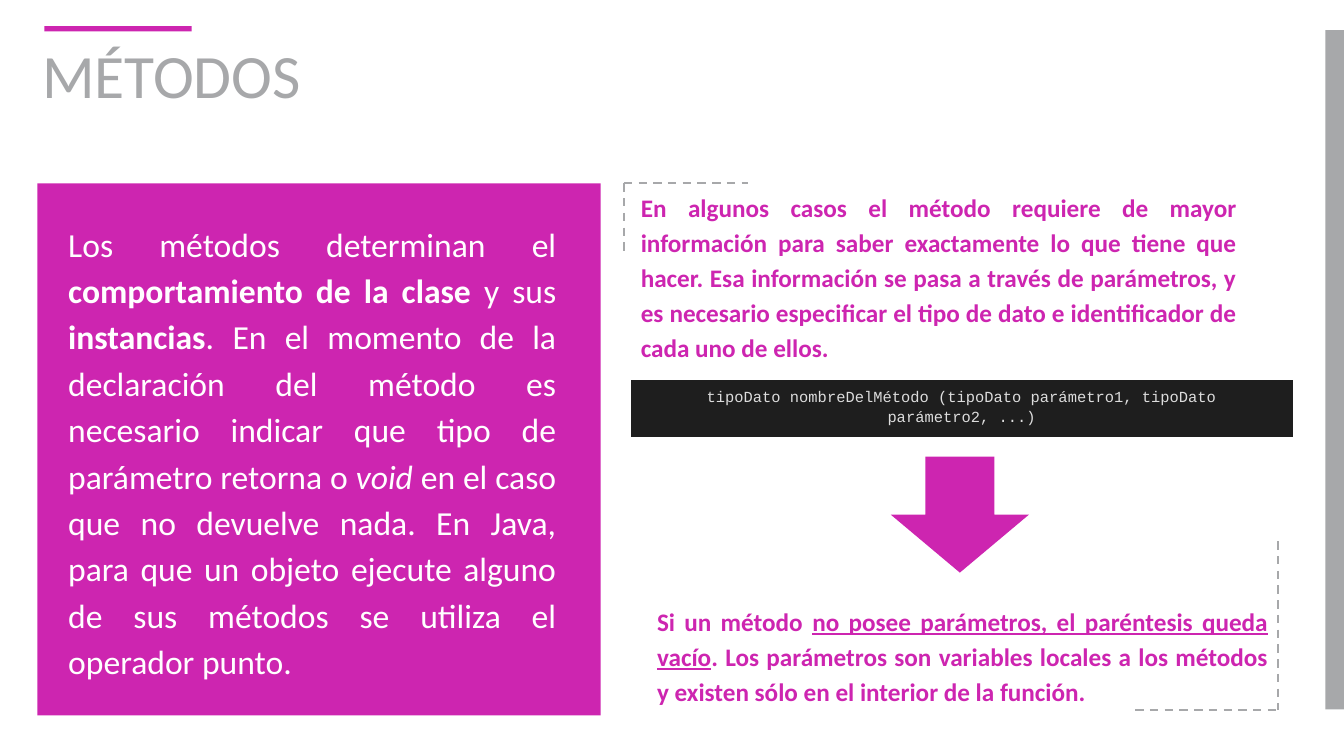
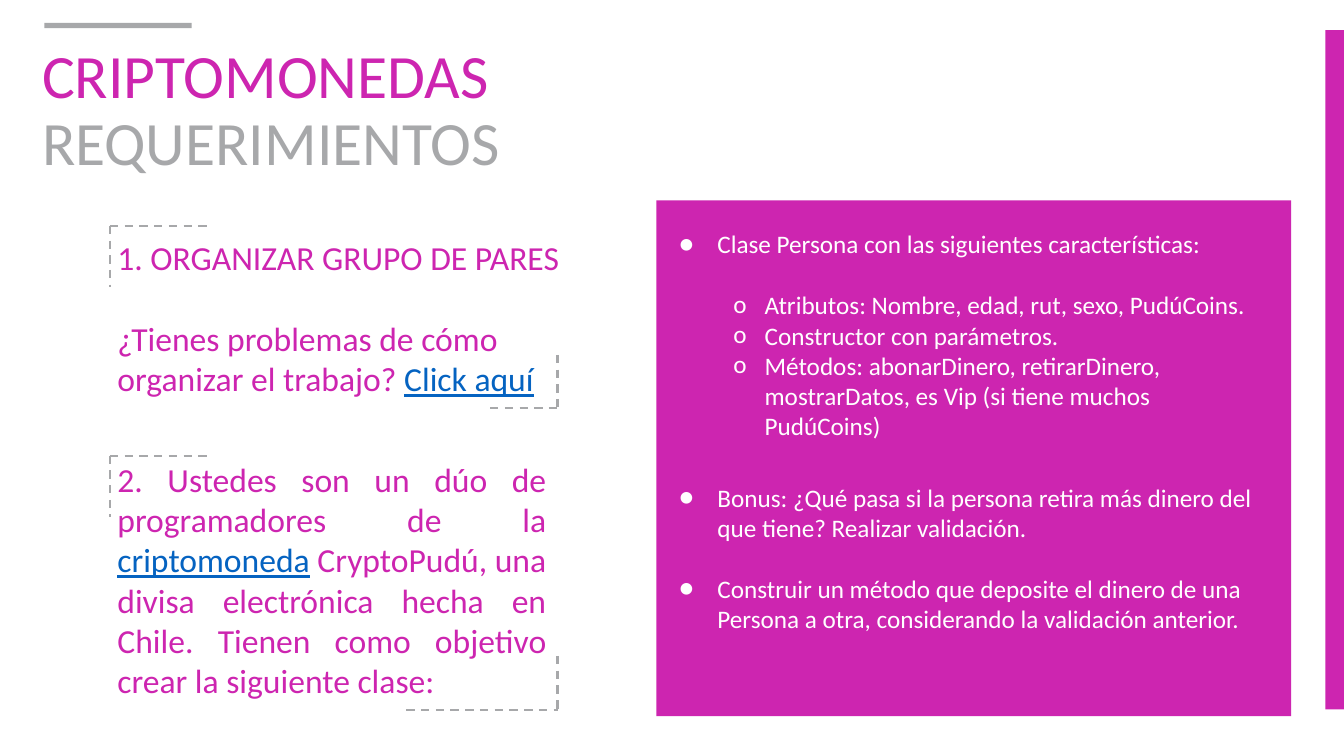
from lxml import etree
from pptx import Presentation
from pptx import util as u
from pptx.dml.color import RGBColor
from pptx.enum import dml, shapes, text
from pptx.oxml import ns

COLORS = {
    "magenta": "CD25B0",
    "gray": "A7A8AA",
    "white": "FFFFFF",
    "link": "0563C1",
    "code": "DCDCDC",
    "code_bg": "1E1E1E",
}
FONT, CODE_FONT = "Calibri", "Courier New"
JUSTIFY = text.PP_ALIGN.JUSTIFY
CENTER = text.PP_ALIGN.CENTER
RECT = shapes.MSO_SHAPE.RECTANGLE


def rgb(name):
    return RGBColor.from_string(COLORS[name])


class Deck:
    def __init__(self):
        self.prs = Presentation()
        self.prs.slide_width, self.prs.slide_height = u.Cm(33.87), u.Cm(19.05)
        self.s = None

    def slide(self, title, band, accent, accent_top):
        self.s = self.prs.slides.add_slide(self.prs.slide_layouts[6])
        self.shape(33.4, 0.76, 0.48, 17.12, band)
        tf = self.box(0.81, 1.02, 29.21, 3.68)
        for line, color in title:
            self.para(tf, [(line, "")], 44, color, spacing=0.9)
        self.shape(1.12, accent_top, 3.71, 0.13, accent)

    def shape(self, x, y, w, h, color, kind=RECT):
        sp = self.s.shapes.add_shape(kind, u.Cm(x), u.Cm(y), u.Cm(w), u.Cm(h))
        sp.shadow.inherit = False
        sp.fill.solid()
        sp.fill.fore_color.rgb = rgb(color)
        sp.line.fill.background()

    def box(self, x, y, w, h):
        sp = self.s.shapes.add_textbox(u.Cm(x), u.Cm(y), u.Cm(w), u.Cm(h))
        sp.text_frame.word_wrap = True
        return sp.text_frame

    def para(self, tf, runs, size, color, align=None, spacing=1.0, after=0,
             indent=(0, 0), bullet=None, font=FONT):
        p = tf.paragraphs[0]
        if p.runs:
            p = tf.add_paragraph()
        p.alignment, p.line_spacing, p.space_after = align, spacing, u.Pt(after)
        pPr = p._p.get_or_add_pPr()
        pPr.set("marL", str(u.Cm(indent[0])))
        pPr.set("indent", str(u.Cm(indent[1])))
        if bullet:
            clr = etree.SubElement(pPr, ns.qn("a:buClr"))
            etree.SubElement(clr, ns.qn("a:srgbClr"), val=COLORS[color])
            etree.SubElement(pPr, ns.qn("a:buFont"), typeface=font)
            etree.SubElement(pPr, ns.qn("a:buChar"), char=bullet)
        for words, style in runs:
            r = p.add_run()
            r.text = words
            f = r.font
            f.name, f.size = font, u.Pt(size)
            f.color.rgb = rgb("link" if style == "link" else color)
            f.bold = "b" in style
            f.italic = style == "i"
            f.underline = style in ("link", "bu")

    def corner(self, x, y, dx, dy):
        for x2, y2 in ((x + dx, y), (x, y + dy)):
            ends = (min(x, x2), min(y, y2), max(x, x2), max(y, y2))
            ln = self.s.shapes.add_connector(
                shapes.MSO_CONNECTOR.STRAIGHT, *map(u.Cm, ends))
            ln.line.color.rgb = rgb("gray")
            ln.line.width = u.Pt(1.5)
            ln.line.dash_style = dml.MSO_LINE.DASH
            etree.SubElement(ln._element.spPr, ns.qn("a:effectLst"))

    def code(self, x, y, w, h, words):
        tbl = self.s.shapes.add_table(1, 1, u.Cm(x), u.Cm(y), u.Cm(w), u.Cm(h)).table
        tbl.first_row = tbl.horz_banding = False
        cell = tbl.cell(0, 0)
        cell.fill.solid()
        cell.fill.fore_color.rgb = rgb("code_bg")
        cell.margin_left = cell.margin_right = u.Cm(0.2)
        cell.margin_top = cell.margin_bottom = u.Cm(0.2)
        self.para(cell.text_frame, [(words, "")], 11, "code", CENTER, 1.15,
                  font=CODE_FONT)


def methods_slide(d):
    d.slide([("MÉTODOS", "gray")], "gray", "magenta", 0.66)
    d.corner(15.72, 4.62, 3.12, 1.78)
    d.corner(32.21, 17.88, -3.6, -4.24)
    d.shape(0.94, 4.62, 14.2, 13.41, "magenta")
    d.para(d.box(1.47, 5.36, 12.8, 11.99), [
        ("Los métodos determinan el ", ""),
        ("comportamiento de la clase", "b"),
        (" y sus ", ""),
        ("instancias", "b"),
        (". En el momento de la declaración del método es necesario indicar "
         "que tipo de parámetro retorna o ", ""),
        ("void", "i"),
        (" en el caso que no devuelve nada. En Java, para que un objeto ejecute "
         "alguno de sus métodos se utiliza el operador punto.", ""),
    ], 24, "white", JUSTIFY, 1.15)
    d.para(d.box(15.9, 4.62, 15.52, 4.67), [
        ("En algunos casos el método requiere de mayor información para saber "
         "exactamente lo que tiene que hacer. Esa información se pasa a través de "
         "parámetros, y es necesario especificar el tipo de dato e identificador "
         "de cada uno de ellos.", "b"),
    ], 18, "magenta", JUSTIFY, 1.15)
    d.code(15.88, 9.55, 16.71, 1.4,
           "tipoDato nombreDelMétodo (tipoDato parámetro1, tipoDato parámetro2, ...)")
    d.para(d.box(16.31, 15.04, 15.9, 2.87), [
        ("Si un método ", "b"),
        ("no posee parámetros, el paréntesis queda vacío", "bu"),
        (". Los parámetros son variables locales a los métodos y existen sólo en "
         "el interior de la función.", "b"),
    ], 18, "magenta", JUSTIFY, 1.15)
    d.shape(22.45, 11.51, 3.48, 2.92, "magenta", shapes.MSO_SHAPE.DOWN_ARROW)


def requirements_slide(d):
    d.slide([("CRIPTOMONEDAS", "magenta"), ("REQUERIMIENTOS", "gray")],
            "magenta", "gray", 0.58)
    for top, bottom, width in ((5.69, 10.29, 1.7), (11.48, 17.88, 3.81)):
        d.corner(2.77, top, 2.44, 1.55)
        d.corner(14.05, bottom, -width, -1.35)

    tf = d.box(2.41, 5.84, 12.14, 4.37)
    d.para(tf, [("1. ORGANIZAR GRUPO DE PARES", "")], 24, "magenta",
           after=29.3, indent=(0.3, 0))
    d.para(tf, [("¿Tienes problemas de cómo organizar el trabajo? ", ""),
                ("Click aquí", "link")], 24, "magenta", indent=(0.3, 0))
    d.para(d.box(2.41, 11.43, 11.61, 6.4), [
        ("2. Ustedes son un dúo de programadores de la ", ""),
        ("criptomoneda", "link"),
        (" CryptoPudú, una divisa electrónica hecha en Chile. Tienen como "
         "objetivo crear la siguiente clase:", ""),
    ], 24, "magenta", JUSTIFY, indent=(0.3, 0))

    d.shape(16.54, 5.05, 16, 13, "magenta")
    tf = d.box(16.56, 5.64, 15.44, 11.53)
    main, sub = ("●", (1.27, -0.97)), ("o", (2.46, -0.79))
    items = [
        (main, 22, "Clase Persona con las siguientes características:"),
        (sub, 0, "Atributos: Nombre, edad, rut, sexo, PudúCoins."),
        (sub, 0, "Constructor con parámetros."),
        (sub, 29.3, "Métodos: abonarDinero, retirarDinero, mostrarDatos, es Vip "
                    "(si tiene muchos PudúCoins)"),
        (main, 22, "Bonus: ¿Qué pasa si la persona retira más dinero del que "
                   "tiene? Realizar validación."),
        (main, 0, "Construir un método que deposite el dinero de una Persona a "
                  "otra, considerando la validación anterior."),
    ]
    for (bullet, indent), after, words in items:
        d.para(tf, [(words, "")], 18, "white", after=after, indent=indent,
               bullet=bullet)


def main():
    d = Deck()
    methods_slide(d)
    requirements_slide(d)
    d.prs.save("out.pptx")


if __name__ == "__main__":
    main()
